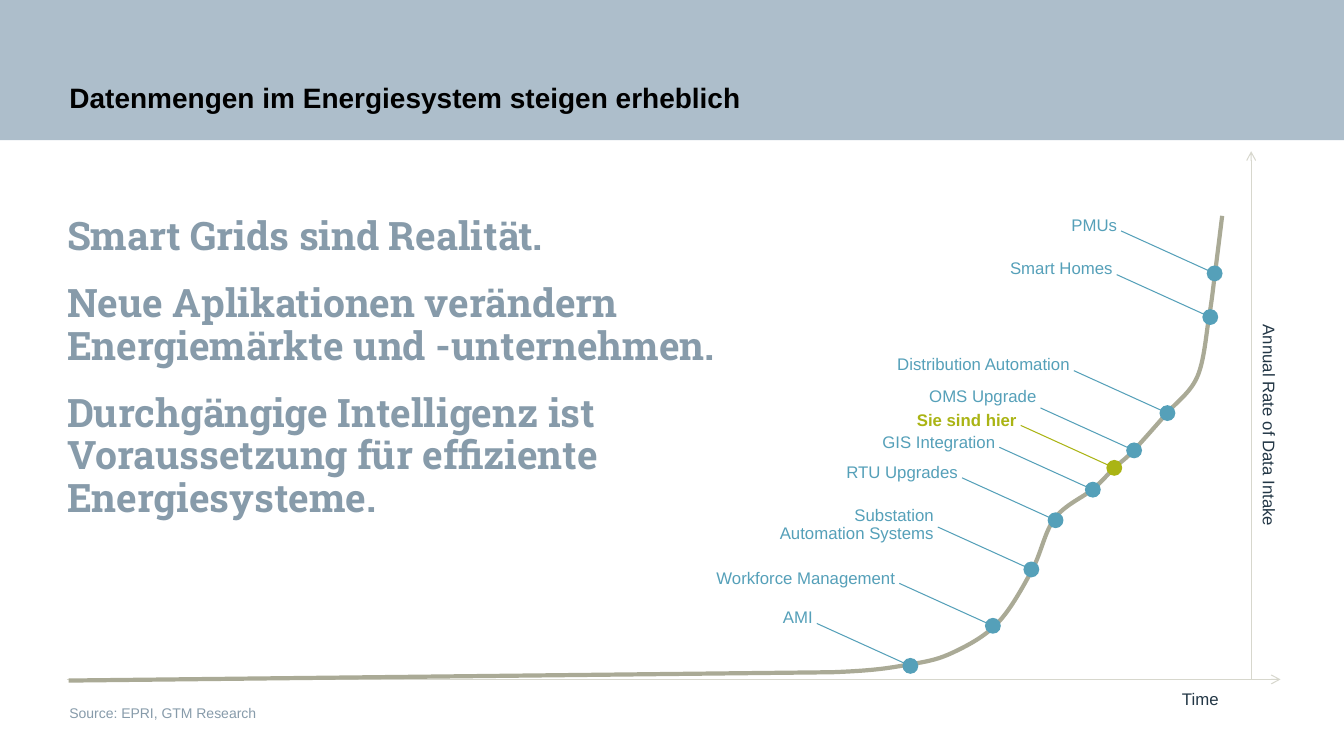
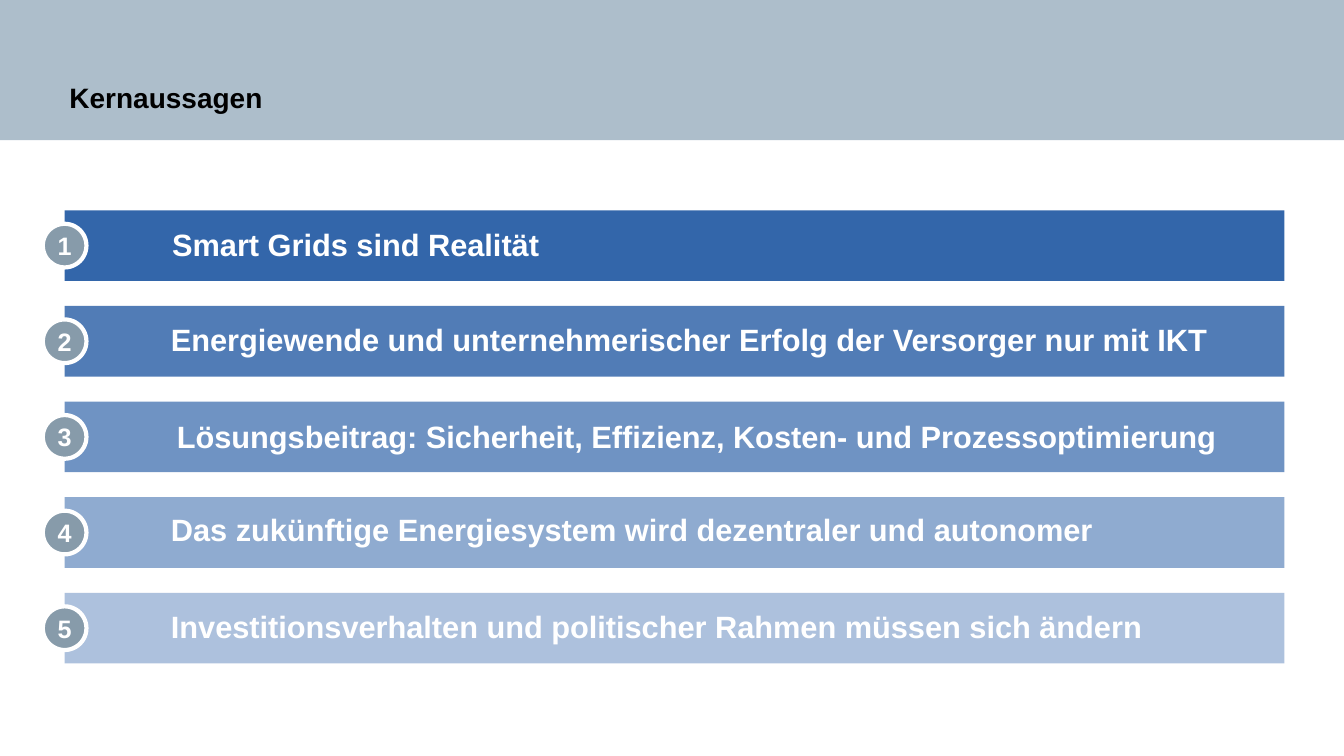
from copy import deepcopy
from dataclasses import dataclass

from lxml.etree import SubElement
from pptx import Presentation
from pptx.dml.color import RGBColor
from pptx.enum.shapes import MSO_CONNECTOR as Connector, MSO_SHAPE as Preset
from pptx.enum.text import MSO_ANCHOR as Anchor, PP_ALIGN as Align
from pptx.oxml.ns import qn
from pptx.util import Cm, Pt


@dataclass(frozen=True)
class Theme:
    band: str = "ADBECB"
    black: str = "000000"
    white: str = "FFFFFF"
    slate: str = "879BAA"
    navy: str = "233746"
    axis: str = "D7D7CD"
    curve: str = "AAAA96"
    teal: str = "55A0B9"
    lime: str = "AAB414"
    blue: str = "3366AA"
    sans: str = "Arial"
    slab: str = "Roboto Slab"
    title_size: int = 20
    statement_size: int = 28
    message_size: int = 22
    number_size: int = 18
    label_size: int = 12
    source_size: int = 10


THEME = Theme()
WIDTH, HEIGHT = 33.88, 19.05
MARGIN = 1.75

STATEMENTS = """Smart Grids sind Realität.
Neue Aplikationen verändern Energiemärkte und -unternehmen.
Durchgängige Intelligenz ist Voraussetzung für effiziente Energiesysteme."""

MILESTONES = [
    ("PMUs", 30.62, 6.89, 5.69),
    ("Smart Homes", 30.51, 7.99, 6.78),
    ("Distribution Automation", 29.43, 10.41, 9.19),
    ("OMS Upgrade", 28.59, 11.35, 10.01),
    ("Sie sind hier", 28.09, 11.79, 10.62),
    ("GIS Integration", 27.55, 12.34, 11.16),
    ("RTU Upgrades", 26.61, 13.11, 11.92),
    ("Substation\vAutomation Systems", 26, 14.35, 13.23),
    ("Workforce Management", 25.03, 15.77, 14.58),
    ("AMI", 22.95, 16.78, 15.57),
]
CURRENT = "Sie sind hier"
LEADER_X, LEADER_Y = 2.36, 1.07
DOT = 0.4

CURVE_START = (1.73, 17.15)
CURVE_LEAD_IN = (16.1, 17)
CURVE_KNOTS = [
    (20.98, 16.94), (22.96, 16.74), (24.05, 16.43), (25.15, 15.7),
    (26.01, 14.38), (26.59, 13.06), (27.56, 12.32), (28.09, 11.79),
    (28.55, 11.38), (29.39, 10.44), (30.18, 9.5), (30.48, 7.98),
    (30.63, 6.88), (30.81, 5.44),
]

MESSAGES = [
    ("Smart Grids sind Realität", 4.34, 5.69),
    ("Energiewende und unternehmerischer Erfolg der Versorger nur mit IKT", 4.31, 8.08),
    ("Lösungsbeitrag: Sicherheit, Effizienz, Kosten- und Prozessoptimierung", 4.46, 10.52),
    ("Das zukünftige Energiesystem wird dezentraler und autonomer", 4.31, 12.87),
    ("Investitionsverhalten und politischer Rahmen müssen sich ändern", 4.31, 15.32),
]
BAR_LEFT, BAR_TOP, BAR_WIDTH, BAR_HEIGHT, BAR_STEP = 1.63, 5.3, 30.75, 1.78, 2.41
BADGE = 1.1


def rgb(color):
    return RGBColor.from_string(color)


def write_text(shape, text, *, size, color, font=THEME.sans, bold=False,
               align=Align.LEFT, anchor=Anchor.TOP, insets=(0, 0, 0, 0),
               spacing=1.0, before=0, wrap=True):
    frame = shape.text_frame
    frame.word_wrap = wrap
    frame.vertical_anchor = anchor
    (frame.margin_left, frame.margin_top,
     frame.margin_right, frame.margin_bottom) = map(Cm, insets)
    for index, content in enumerate(text.split("\n")):
        para = frame.add_paragraph() if index else frame.paragraphs[0]
        para.text = content
        para.alignment = align
        para.line_spacing = spacing
        para.space_before = Pt(before if index else 0)
        for span in para.runs:
            span.font.name = font
            span.font.size = Pt(size)
            span.font.bold = bold
            span.font.color.rgb = rgb(color)
        for line_break in para._p.findall(qn("a:br")):
            line_break.append(deepcopy(para._p.find(qn("a:r")).rPr))


def bezier_segments(lead_in, knots):
    padded = [lead_in, *knots, knots[-1]]
    for before, start, end, after in zip(padded, padded[1:], padded[2:], padded[3:]):
        yield (
            tuple(s + (e - b) / 6 for b, s, e in zip(before, start, end)),
            tuple(e - (a - s) / 6 for s, e, a in zip(start, end, after)),
            end,
        )


class SlideBuilder:
    """Draws styled elements on the current slide of a deck."""

    def __init__(self, theme):
        self.theme = theme
        self.deck = Presentation()
        self.deck.slide_width, self.deck.slide_height = Cm(WIDTH), Cm(HEIGHT)
        self.page = None

    def new_page(self, title):
        self.page = self.deck.slides.add_slide(self.deck.slide_layouts[6])
        band = self.shape(Preset.RECTANGLE, 0, 0, WIDTH, 3.53, self.theme.band)
        write_text(band, title, size=self.theme.title_size,
                   color=self.theme.black, bold=True, anchor=Anchor.BOTTOM,
                   insets=(MARGIN, 1.09, 5.89, 0.66))

    def shape(self, preset, left, top, width, height, fill, opacity=100, outline=None):
        shape = self.page.shapes.add_shape(
            preset, Cm(left), Cm(top), Cm(width), Cm(height))
        shape.shadow.inherit = False
        shape.fill.solid()
        shape.fill.fore_color.rgb = rgb(fill)
        if opacity < 100:
            color = shape.fill._xPr.find(qn("a:solidFill"))[0]
            SubElement(color, qn("a:alpha"), val=str(opacity * 1000))
        if outline:
            shape.line.color.rgb = rgb(outline)
            shape.line.width = Pt(3)
        else:
            shape.line.fill.background()
        return shape

    def circle(self, x, y, size, fill, outline=None):
        return self.shape(Preset.OVAL, x - size / 2, y - size / 2, size, size,
                          fill, outline=outline)

    def text(self, left, top, width, height, text, **style):
        box = self.page.shapes.add_textbox(Cm(left), Cm(top), Cm(width), Cm(height))
        write_text(box, text, **style)
        return box

    def line(self, start, end, color, arrow=False):
        line = self.page.shapes.add_connector(
            Connector.STRAIGHT, *map(Cm, (*start, *end)))
        line.line.color.rgb = rgb(color)
        line.line.width = Pt(0.75)
        if arrow:
            SubElement(line.line._get_or_add_ln(), qn("a:tailEnd"), type="arrow")
        SubElement(line._element.spPr, qn("a:effectLst"))

    def curve(self, start, lead_in, knots, color):
        builder = self.page.shapes.build_freeform(*map(Cm, start))
        builder.add_line_segments([tuple(map(Cm, knot)) for knot in knots], close=False)
        curve = builder.convert_to_shape()
        curve.shadow.inherit = False
        curve.fill.background()
        curve.line.color.rgb = rgb(color)
        curve.line.width = Pt(3)
        straight_lines = list(curve._element.iter(qn("a:lnTo")))[1:]
        for segment, controls in zip(straight_lines, bezier_segments(lead_in, knots)):
            bend = segment.getparent().makeelement(qn("a:cubicBezTo"))
            for x, y in controls:
                SubElement(bend, qn("a:pt"), x=str(Cm(x) - curve.left),
                           y=str(Cm(y) - curve.top))
            segment.getparent().replace(segment, bend)

    def milestone(self, label, x, y, label_y, current):
        color = self.theme.lime if current else self.theme.teal
        leader_x = x - LEADER_X
        self.line((leader_x, y - LEADER_Y), (x, y), color)
        self.circle(x, y, DOT, color)
        width, height = 5, 1
        self.text(leader_x - width, label_y - height / 2, width, height, label,
                  size=self.theme.label_size, color=color, bold=current,
                  align=Align.RIGHT, anchor=Anchor.MIDDLE,
                  insets=(0, 0, 0.1, 0), spacing=0.9)

    def message_bar(self, index, message, left, text_top):
        top = BAR_TOP + index * BAR_STEP
        self.shape(Preset.RECTANGLE, BAR_LEFT, top, BAR_WIDTH, BAR_HEIGHT,
                   self.theme.blue, opacity=100 - 15 * index)
        badge = self.circle(BAR_LEFT, top + BAR_HEIGHT / 2, BADGE,
                            self.theme.slate, outline=self.theme.white)
        write_text(badge, str(index + 1), size=self.theme.number_size,
                   color=self.theme.white, bold=True, align=Align.CENTER,
                   anchor=Anchor.MIDDLE, wrap=False)
        self.text(left, text_top, 27.5, 0.94, message, bold=True,
                  size=self.theme.message_size, color=self.theme.white)


def data_growth(builder):
    theme = builder.theme
    builder.new_page("Datenmengen im Energiesystem steigen erheblich")
    axis_x, axis_y = 31.54, 17.12
    builder.line((axis_x, axis_y), (axis_x, 3.81), theme.axis, arrow=True)
    builder.line((1.68, axis_y), (32.28, axis_y), theme.axis, arrow=True)
    axis_style = dict(size=theme.label_size, color=theme.navy, spacing=1.1)
    builder.text(27.82, 17.3, 3, 0.56, "Time", align=Align.RIGHT,
                 insets=(0, 0, 0.1, 0), **axis_style)
    rate = builder.text(25.53, 10.44, 13, 0.56, "Annual Rate of Data Intake",
                        align=Align.CENTER, **axis_style)
    rate.rotation = 90
    builder.text(1.69, 5.45, 17.48, 12.6, STATEMENTS, size=theme.statement_size,
                 color=theme.slate, font=theme.slab, bold=True,
                 spacing=0.9, before=18)
    builder.text(MARGIN, 17.7, 30.78, 0.43, "Source: EPRI, GTM Research",
                 size=theme.source_size, color=theme.slate, spacing=1.1)
    builder.curve(CURVE_START, CURVE_LEAD_IN, CURVE_KNOTS, theme.curve)
    for label, x, y, label_y in MILESTONES:
        builder.milestone(label, x, y, label_y, label == CURRENT)


def key_messages(builder):
    builder.new_page("Kernaussagen")
    for index, (message, left, text_top) in enumerate(MESSAGES):
        builder.message_bar(index, message, left, text_top)


def main():
    builder = SlideBuilder(THEME)
    data_growth(builder)
    key_messages(builder)
    builder.deck.save("out.pptx")


if __name__ == "__main__":
    main()
